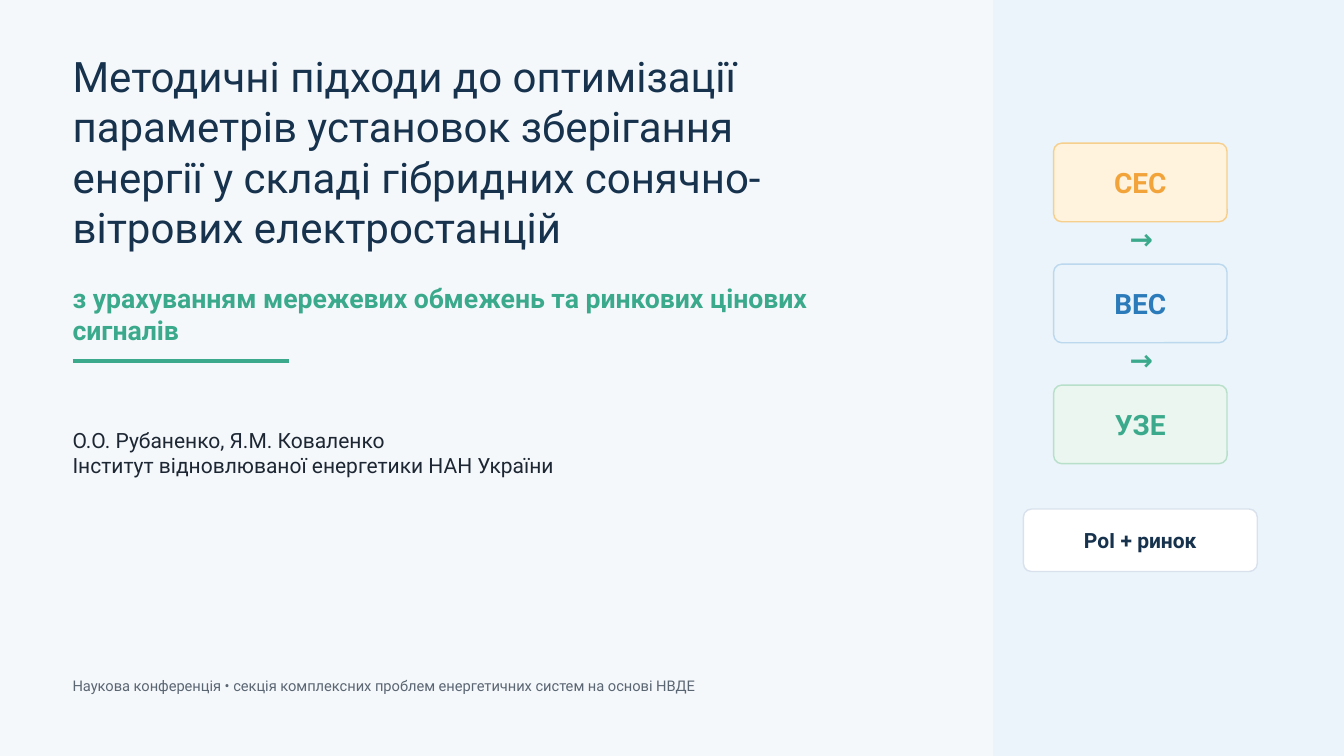
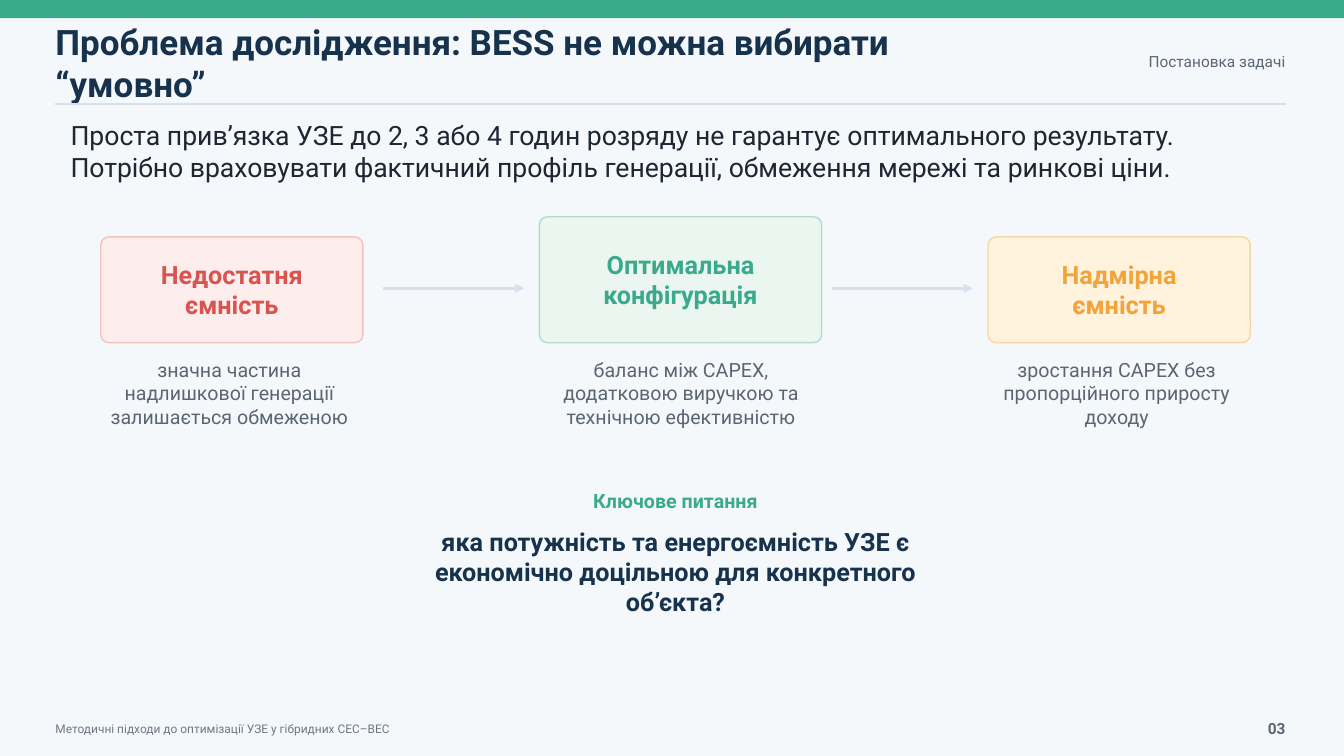
from lxml import etree
from pptx import Presentation
from pptx import util as u
from pptx.dml.color import RGBColor
from pptx.enum import shapes, text
from pptx.oxml.ns import qn

BACKGROUND = RGBColor(0xF5, 0xF8, 0xFB)
WHITE = RGBColor(0xFF, 0xFF, 0xFF)
NAVY = RGBColor(0x17, 0x32, 0x4D)
INK = RGBColor(0x1D, 0x27, 0x33)
GRAY = RGBColor(0x5B, 0x66, 0x73)
FOOTER_GRAY = RGBColor(0x6D, 0x77, 0x83)
RULE = RGBColor(0xD9, 0xE2, 0xEC)
GREEN = RGBColor(0x3B, 0xAA, 0x8C)
GREEN_PALE = RGBColor(0xEA, 0xF6, 0xEF)
GREEN_EDGE = RGBColor(0xB7, 0xDF, 0xC9)
OPTIMUM_EDGE = RGBColor(0xAF, 0xDD, 0xC6)
BLUE = RGBColor(0x2B, 0x7B, 0xBB)
BLUE_PALE = RGBColor(0xEA, 0xF4, 0xFA)
BLUE_EDGE = RGBColor(0xBB, 0xD8, 0xEE)
ORANGE = RGBColor(0xF2, 0xA3, 0x3A)
ORANGE_PALE = RGBColor(0xFF, 0xF3, 0xDE)
ORANGE_EDGE = RGBColor(0xF7, 0xCF, 0x8D)
EXCESS_EDGE = RGBColor(0xF3, 0xD8, 0xA3)
RED = RGBColor(0xD9, 0x53, 0x4F)
RED_PALE = RGBColor(0xFD, 0xED, 0xEC)
RED_EDGE = RGBColor(0xF3, 0xC2, 0xBF)

LEFT = text.PP_ALIGN.LEFT
CENTER = text.PP_ALIGN.CENTER
RIGHT = text.PP_ALIGN.RIGHT
TOP = text.MSO_ANCHOR.TOP
MIDDLE = text.MSO_ANCHOR.MIDDLE


class Deck:
    font = "Roboto"
    width, height = 13.33, 7.5
    margin, right_edge = 0.55, 12.75
    corner_radius = 0.08
    footer = "Методичні підходи до оптимізації УЗЕ у гібридних СЕС–ВЕС"

    def __init__(self):
        self.presentation = Presentation()
        self.presentation.slide_width = u.Inches(self.width)
        self.presentation.slide_height = u.Inches(self.height)
        fill = self.presentation.slide_master.background.fill
        fill.solid()
        fill.fore_color.rgb = BACKGROUND
        self.slide = None

    def add_slide(self):
        layout = self.presentation.slide_layouts.get_by_name("Title Only")
        self.slide = self.presentation.slides.add_slide(layout)

    def set_text(self, shape, content, size, color, bold=False, align=LEFT, anchor=MIDDLE):
        frame = shape.text_frame
        frame.text = content
        frame.word_wrap = True
        frame.auto_size = text.MSO_AUTO_SIZE.NONE
        frame.vertical_anchor = anchor
        frame.margin_left = frame.margin_right = 0
        frame.margin_top = frame.margin_bottom = 0
        for paragraph in frame.paragraphs:
            paragraph.alignment = align
            paragraph.font.name = self.font
            paragraph.font.size = u.Pt(size)
            paragraph.font.bold = bold
            paragraph.font.color.rgb = color

    def title(self, content, left, top, width, height, size, bold=False):
        shape = self.slide.shapes.title
        shape.left, shape.top = u.Inches(left), u.Inches(top)
        shape.width, shape.height = u.Inches(width), u.Inches(height)
        self.set_text(shape, content, size, NAVY, bold)

    def label(self, content, left, top, width, height, size, color, **style):
        shape = self.slide.shapes.add_textbox(
            u.Inches(left), u.Inches(top), u.Inches(width), u.Inches(height))
        self.set_text(shape, content, size, color, **style)

    def block(self, kind, left, top, width, height, fill):
        shape = self.slide.shapes.add_shape(
            kind, u.Inches(left), u.Inches(top), u.Inches(width), u.Inches(height))
        shape.shadow.inherit = False
        shape.fill.solid()
        shape.fill.fore_color.rgb = fill
        shape.line.fill.background()
        return shape

    def band(self, left, top, width, height, fill):
        self.block(shapes.MSO_SHAPE.RECTANGLE, left, top, width, height, fill)

    def card(self, content, left, top, width, height, size, color, fill, edge):
        shape = self.block(
            shapes.MSO_SHAPE.ROUNDED_RECTANGLE, left, top, width, height, fill)
        shape.adjustments[0] = self.corner_radius / height
        shape.line.color.rgb = edge
        shape.line.width = u.Pt(1)
        self.set_text(shape, content, size, color, bold=True, align=CENTER)

    def line(self, left, right, y, color, weight, arrow=False):
        connector = self.slide.shapes.add_connector(
            shapes.MSO_CONNECTOR.STRAIGHT,
            u.Inches(left), u.Inches(y), u.Inches(right), u.Inches(y))
        connector.line.color.rgb = color
        connector.line.width = u.Pt(weight)
        if arrow:
            outline = connector.get_or_add_ln()
            etree.SubElement(outline, qn("a:tailEnd"), type="triangle")
        etree.SubElement(connector.element.spPr, qn("a:effectLst"))

    def content_slide(self, title, section, number):
        self.add_slide()
        self.band(0, 0, self.width, 0.18, GREEN)
        self.title(title, self.margin, 0.35, 9.4, 0.54, 25, bold=True)
        self.label(section, self.right_edge - 2.45, 0.43, 2.45, 0.35, 11, GRAY, align=RIGHT)
        self.line(self.margin, self.right_edge, 1.03, RULE, 1)
        self.label(self.footer, self.margin, 7.12, 8.5, 0.22, 8.5, FOOTER_GRAY)
        self.label(f"{number:02}", self.right_edge - 0.55, 7.05, 0.55, 0.35, 11, GRAY,
                   bold=True, align=RIGHT)


def build_cover(deck):
    margin = 0.72
    deck.add_slide()
    deck.band(9.85, 0, 3.48, deck.height, BLUE_PALE)
    deck.title("Методичні підходи до оптимізації параметрів установок зберігання енергії "
               "у складі гібридних сонячно-вітрових електростанцій",
               margin, 0.31, 7.95, 2.38, 30)
    deck.label("з урахуванням мережевих обмежень та ринкових цінових сигналів",
               margin, 2.82, 7.4, 0.58, 19, GREEN, bold=True)
    deck.line(margin, margin + 2.15, 3.58, GREEN, 3)
    deck.label("О.О. Рубаненко, Я.М. Коваленко\nІнститут відновлюваної енергетики НАН України",
               margin, 4.18, 6.7, 0.62, 15, INK)

    first_top, step = 1.42, 1.2
    sources = [
        ("СЕС", ORANGE, ORANGE_PALE, ORANGE_EDGE),
        ("ВЕС", BLUE, BLUE_PALE, BLUE_EDGE),
        ("УЗЕ", GREEN, GREEN_PALE, GREEN_EDGE),
    ]
    for index, (name, color, fill, edge) in enumerate(sources):
        top = first_top + index * step
        deck.card(name, 10.45, top, 1.72, 0.78, 20, color, fill, edge)
        if index < len(sources) - 1:
            deck.label("→", 10.92, top + 0.8, 0.8, 0.28, 20, GREEN, bold=True, align=CENTER)
    deck.card("PoI + ринок", 10.15, 5.05, 2.32, 0.62, 15, NAVY, WHITE, RULE)
    deck.label("Наукова конференція • секція комплексних проблем енергетичних систем "
               "на основі НВДЕ", margin, 6.65, 8.4, 0.3, 10.5, GRAY)


def build_problem(deck):
    deck.content_slide("Проблема дослідження: BESS не можна вибирати “умовно”",
                       "Постановка задачі", 3)
    deck.label("Проста прив’язка УЗЕ до 2, 3 або 4 годин розряду не гарантує оптимального "
               "результату. Потрібно враховувати фактичний профіль генерації, обмеження "
               "мережі та ринкові ціни.", 0.7, 1.18, 11.8, 0.75, 19, INK, anchor=TOP)

    card_bottom = 3.4
    options = [
        ("Недостатня\nємність", 1, 2.6, 1.05, RED, RED_PALE, RED_EDGE,
         "значна частина надлишкової генерації залишається обмеженою", 1.05, 2.45),
        ("Оптимальна\nконфігурація", 5.35, 2.8, 1.25, GREEN, GREEN_PALE, OPTIMUM_EDGE,
         "баланс між CAPEX, додатковою виручкою та технічною ефективністю", 5.38, 2.75),
        ("Надмірна\nємність", 9.8, 2.6, 1.05, ORANGE, ORANGE_PALE, EXCESS_EDGE,
         "зростання CAPEX без пропорційного приросту доходу", 9.85, 2.45),
    ]
    for name, left, width, height, color, fill, edge, note, note_left, note_width in options:
        deck.card(name, left, card_bottom - height, width, height, 18, color, fill, edge)
        deck.label(note, note_left, card_bottom + 0.15, note_width, 1, 14, GRAY,
                   align=CENTER, anchor=TOP)
    for arrow_left in (3.8, 8.25):
        deck.line(arrow_left, arrow_left + 1.4, 2.86, RULE, 2.2, arrow=True)

    deck.label("Ключове питання", 5.25, 4.85, 2.9, 0.28, 14, GREEN,
               bold=True, align=CENTER, anchor=TOP)
    deck.label("яка потужність та енергоємність УЗЕ є економічно доцільною "
               "для конкретного об’єкта?", 3.8, 5.22, 5.8, 0.75, 18, NAVY,
               bold=True, align=CENTER, anchor=TOP)


def main():
    deck = Deck()
    build_cover(deck)
    build_problem(deck)
    deck.presentation.save("out.pptx")


if __name__ == "__main__":
    main()
